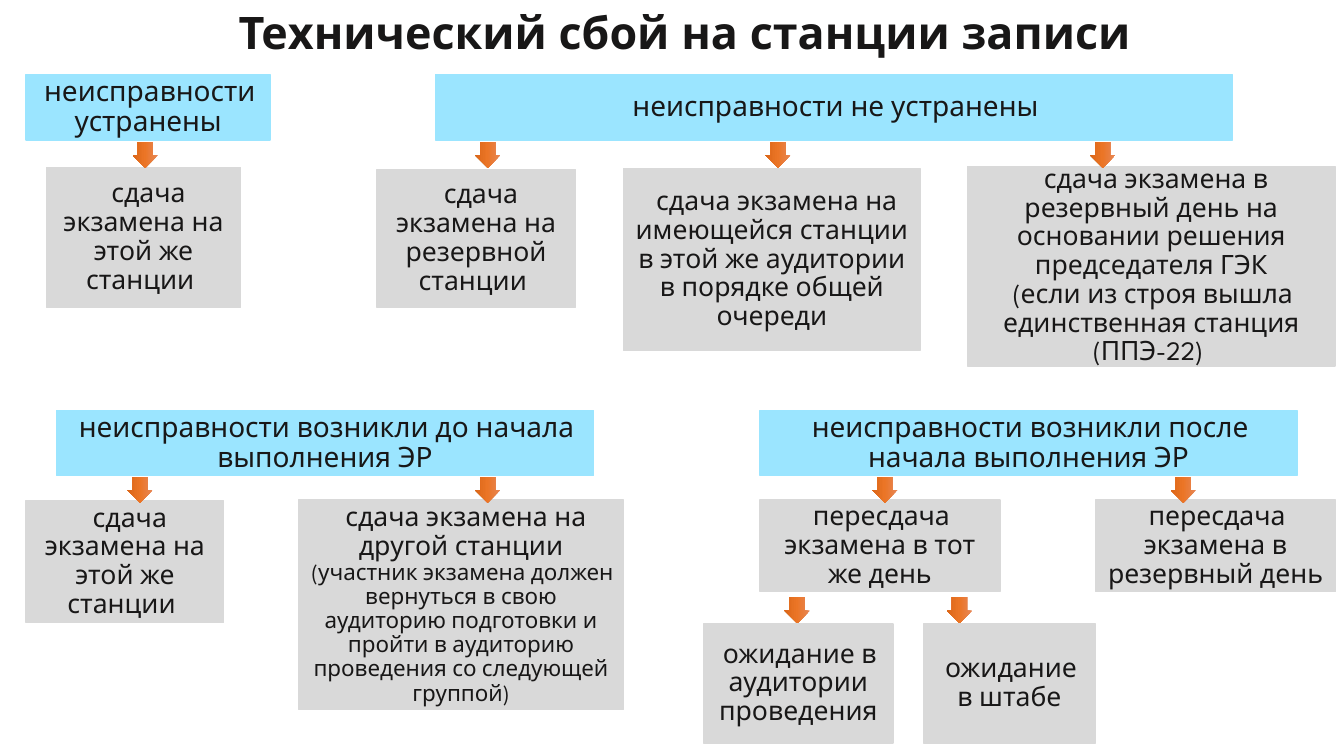
from copy import deepcopy
from dataclasses import dataclass

from pptx import Presentation
from pptx.dml.color import RGBColor
from pptx.enum import shapes, text
from pptx.oxml import ns
from pptx.util import Cm, Pt

FONT = "League Spartan"
INK, CONDITION_FILL, ACTION_FILL = "181717", "9BE5FF", "D9D9D9"
ARROW_STOPS = ((0, "E78756"), (0.5, "EB7526"), (1, "DB6618"))
ARROW_WIDTH, ARROW_HEIGHT = 0.66, 0.64
CONDITION_HEIGHT, CONDITION_SIZE, ACTION_SIZE, NOTE_SIZE = 1.65, 20, 19, 16
FIRST_LINE_INDENT = Cm(0.08)


@dataclass
class Condition:
    left: float
    top: float
    width: float
    wording: str


@dataclass
class Action:
    left: float
    top: float
    width: float
    height: float
    wording: str
    note: str = ""
    note_size: int = NOTE_SIZE


CONDITIONS = [
    Condition(0.66, 1.88, 6.15, "неисправности устранены"),
    Condition(10.97, 1.88, 20.09, "неисправности не устранены"),
    Condition(1.42, 10.34, 13.54, "неисправности возникли до начала выполнения ЭР"),
    Condition(19.15, 10.34, 13.54, "неисправности возникли после начала выполнения ЭР"),
]

ACTIONS = [
    Action(1.17, 4.22, 4.9, 3.53, " сдача экзамена на этой же станции "),
    Action(9.5, 4.27, 5, 3.48, " сдача экзамена на резервной станции "),
    Action(15.72, 4.24, 7.47, 4.6,
           " сдача экзамена на имеющейся станции в этой же аудитории в порядке общей очереди"),
    Action(24.38, 4.19, 9.27, 5.03,
           " сдача экзамена в резервный день на основании решения председателя ГЭК",
           "(если из строя вышла единственная станция (ППЭ-22) ", ACTION_SIZE),
    Action(0.66, 12.62, 4.98, 3.07, " сдача экзамена на этой же станции "),
    Action(7.52, 12.6, 8.2, 5.28, " сдача экзамена на другой станции",
           "(участник экзамена должен вернуться в свою аудиторию подготовки и пройти "
           "в аудиторию проведения со следующей группой)"),
    Action(19.15, 12.6, 6.05, 2.31, "пересдача экзамена в тот же день"),
    Action(27.61, 12.6, 6.05, 2.31, "пересдача экзамена в резервный день"),
    Action(17.73, 15.72, 4.78, 3, "ожидание в аудитории проведения"),
    Action(23.27, 15.72, 4.34, 3, "ожидание в штабе"),
]

# Top of each row of arrows and the left edges of its arrows
ARROW_ROWS = [
    (3.58, (3.33, 11.96, 19.28, 27.46)),
    (12.02, (3.2, 11.96, 21.97, 29.49)),
    (15.06, (19.76, 23.85)),
]


def rgb(colour: str) -> RGBColor:
    return RGBColor.from_string(colour)


def format_paragraph(paragraph, size: int, bold: bool = False) -> None:
    paragraph.alignment = text.PP_ALIGN.CENTER
    font = paragraph.font
    font.name, font.size, font.bold = FONT, Pt(size), bold
    font.color.rgb = rgb(INK)


def add_heading(slide, wording: str) -> None:
    heading = slide.shapes.title
    heading.left, heading.top, heading.width, heading.height = Cm(3.73), Cm(0), Cm(27.05), Cm(1.63)
    frame = heading.text_frame
    frame.text = wording
    frame.word_wrap = True
    frame.auto_size = text.MSO_AUTO_SIZE.NONE
    frame.vertical_anchor = text.MSO_ANCHOR.TOP
    format_paragraph(frame.paragraphs[0], 32, bold=True)


def add_box(slide, left: float, top: float, width: float, height: float,
            colour: str, lines: list[tuple[str, int]]) -> None:
    """Draw a box whose paragraphs are given as (wording, size) pairs."""
    box = slide.shapes.add_shape(shapes.MSO_SHAPE.RECTANGLE,
                                 Cm(left), Cm(top), Cm(width), Cm(height))
    box.shadow.inherit = False
    box.fill.solid()
    box.fill.fore_color.rgb = box.line.color.rgb = rgb(colour)
    box.line.width = Pt(1)
    frame = box.text_frame
    frame.word_wrap = True
    frame.vertical_anchor = text.MSO_ANCHOR.MIDDLE
    frame.text = "\n".join(wording for wording, _ in lines)
    for paragraph, (_, size) in zip(frame.paragraphs, lines):
        format_paragraph(paragraph, size)
        paragraph.line_spacing = 0.9
        properties = paragraph._p.get_or_add_pPr()
        properties.set("marL", "0")
        properties.set("indent", str(FIRST_LINE_INDENT))


def add_down_arrow(slide, left: float, top: float) -> None:
    arrow = slide.shapes.add_shape(shapes.MSO_SHAPE.RIGHT_ARROW, Cm(left), Cm(top),
                                   Cm(ARROW_WIDTH), Cm(ARROW_HEIGHT))
    arrow.rotation = 90
    arrow.adjustments[0], arrow.adjustments[1] = 0.6, 0.5
    arrow.shadow.inherit = False
    arrow.line.fill.background()
    arrow.fill.gradient()
    arrow.fill.gradient_angle = 270
    stop_list = arrow.element.spPr.find(ns.qn("a:gradFill")).find(ns.qn("a:gsLst"))
    stop_list.append(deepcopy(stop_list[0]))
    for stop, (position, colour) in zip(arrow.fill.gradient_stops, ARROW_STOPS):
        stop.position = position
        stop.color.rgb = rgb(colour)


def main() -> None:
    deck = Presentation()
    deck.slide_width, deck.slide_height = Cm(33.87), Cm(19.05)
    slide = deck.slides.add_slide(deck.slide_layouts.get_by_name("Title Only"))
    add_heading(slide, "Технический сбой на станции записи")
    for condition in CONDITIONS:
        add_box(slide, condition.left, condition.top, condition.width, CONDITION_HEIGHT,
                CONDITION_FILL, [(condition.wording, CONDITION_SIZE)])
    for action in ACTIONS:
        lines = [(action.wording, ACTION_SIZE)]
        if action.note:
            lines.append((action.note, action.note_size))
        add_box(slide, action.left, action.top, action.width, action.height, ACTION_FILL, lines)
    for top, lefts in ARROW_ROWS:
        for left in lefts:
            add_down_arrow(slide, left, top)
    deck.save("out.pptx")


if __name__ == "__main__":
    main()
